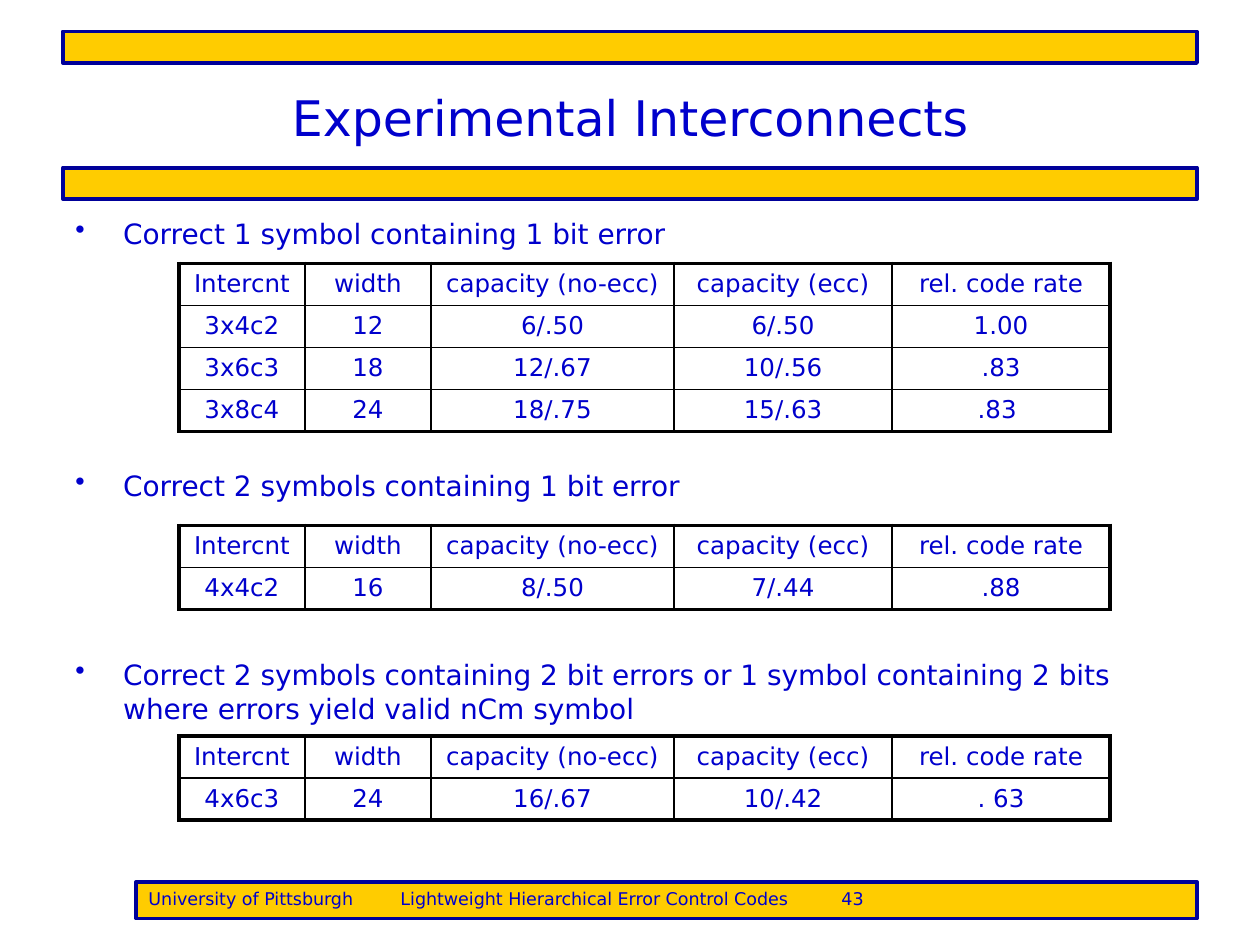
from lxml.etree import SubElement
from pptx import Presentation
from pptx.dml.color import RGBColor
from pptx.enum.shapes import MSO_SHAPE
from pptx.enum.text import MSO_ANCHOR, PP_ALIGN
from pptx.oxml.ns import qn
from pptx.util import Inches, Pt

FONT = "DejaVu Sans"
BLUE, NAVY, GOLD, BLACK = "0000CC", "000099", "FFCC00", "000000"
THIN, THICK = 1, 2.25

COLUMN_WIDTHS = [1, 1, 1.93, 1.73, 1.73]
ROW_HEIGHT = 0.33
HEADER = ["Intercnt", "width", "capacity (no-ecc)", "capacity (ecc)", "rel. code rate"]

# Each section: bullet text, bullet box, table top, table rows
SECTIONS = [
    ("Correct 1 symbol containing 1 bit error", (0.5, 1.67, 9, 0.58), 2.09,
     [["3x4c2", "12", "6/.50", "6/.50", "1.00"],
      ["3x6c3", "18", "12/.67", "10/.56", ".83"],
      ["3x8c4", "24", "18/.75", "15/.63", ".83 "]]),
    ("Correct 2 symbols containing 1 bit error", (0.5, 3.67, 9, 0.42), 4.17,
     [["4x4c2", "16", "8/.50", "7/.44", ".88"]]),
    ("Correct 2 symbols containing 2 bit errors or 1 symbol containing 2 bits "
     "where errors yield valid nCm symbol", (0.5, 5.17, 9, 0.67), 5.84,
     [["4x6c3", "24", "16/.67", "10/.42", ". 63"]]),
]


def color(hex_string):
    return RGBColor.from_string(hex_string)


def write(frame, text, size, align=PP_ALIGN.LEFT, anchor=MSO_ANCHOR.TOP, bullet=False):
    frame.word_wrap = True
    frame.vertical_anchor = anchor
    paragraph = frame.paragraphs[0]
    paragraph.alignment = align
    if bullet:
        properties = paragraph._p.get_or_add_pPr()
        properties.set("marL", str(Inches(0.38)))
        properties.set("indent", str(Inches(-0.38)))
        SubElement(properties, qn("a:buChar"), char="•")
    run = paragraph.add_run()
    run.text = text
    run.font.size = Pt(size)
    run.font.name = FONT
    run.font.color.rgb = color(BLUE)


def add_bar(slide, box):
    bar = slide.shapes.add_shape(MSO_SHAPE.RECTANGLE, *map(Inches, box))
    bar.shadow.inherit = False
    bar.fill.solid()
    bar.fill.fore_color.rgb = color(GOLD)
    bar.line.color.rgb = color(NAVY)
    bar.line.width = Pt(2.25)
    return bar


def add_title(slide, text, box):
    title = slide.shapes.title
    title.left, title.top, title.width, title.height = map(Inches, box)
    write(title.text_frame, text, 28, PP_ALIGN.CENTER, MSO_ANCHOR.MIDDLE)


def add_bullet(slide, text, box):
    bullet_box = slide.shapes.add_textbox(*map(Inches, box))
    write(bullet_box.text_frame, text, 16, bullet=True)


def set_borders(cell, widths):
    properties = cell._tc.get_or_add_tcPr()
    for side, width in zip("LRTB", widths):
        border = SubElement(properties, qn(f"a:ln{side}"), w=str(Pt(width)))
        fill = SubElement(border, qn("a:solidFill"))
        SubElement(fill, qn("a:srgbClr"), val=BLACK)


def add_rate_table(slide, rows, left, top):
    rows = [HEADER] + rows
    last_row, last_column = len(rows) - 1, len(HEADER) - 1
    table = slide.shapes.add_table(
        len(rows), len(HEADER), Inches(left), Inches(top),
        Inches(sum(COLUMN_WIDTHS)), Inches(ROW_HEIGHT * len(rows))).table
    table.first_row = table.horz_banding = False
    for column, width in zip(table.columns, COLUMN_WIDTHS):
        column.width = Inches(width)
    for r, values in enumerate(rows):
        table.rows[r].height = Inches(ROW_HEIGHT)
        for c, value in enumerate(values):
            cell = table.cell(r, c)
            write(cell.text_frame, value, 14, PP_ALIGN.CENTER)
            # Thick lines on the outside, thin ones inside
            outer = (c == 0, c == last_column, r == 0, r == last_row)
            set_borders(cell, [THICK if edge else THIN for edge in outer])
            cell.fill.background()


def add_footer(slide, parts, box):
    footer = add_bar(slide, box)
    write(footer.text_frame, "\t".join(parts), 10)


def main():
    deck = Presentation()
    deck.slide_width, deck.slide_height = Inches(10), Inches(7.5)
    slide = deck.slides.add_slide(deck.slide_layouts[5])

    # Title between two bars
    for top in (0.25, 1.33):
        add_bar(slide, (0.5, top, 9, 0.25))
    add_title(slide, "Experimental Interconnects", (0.5, 0.3, 9, 1.25))

    # Bullets, each with its table
    for text, box, table_top, rows in SECTIONS:
        add_bullet(slide, text, box)
        add_rate_table(slide, rows, 1.42, table_top)

    # Footer
    add_footer(slide, ["University of Pittsburgh",
                       "Lightweight Hierarchical Error Control Codes", "43"],
               (1.08, 7, 8.42, 0.29))
    deck.save("out.pptx")


if __name__ == "__main__":
    main()
